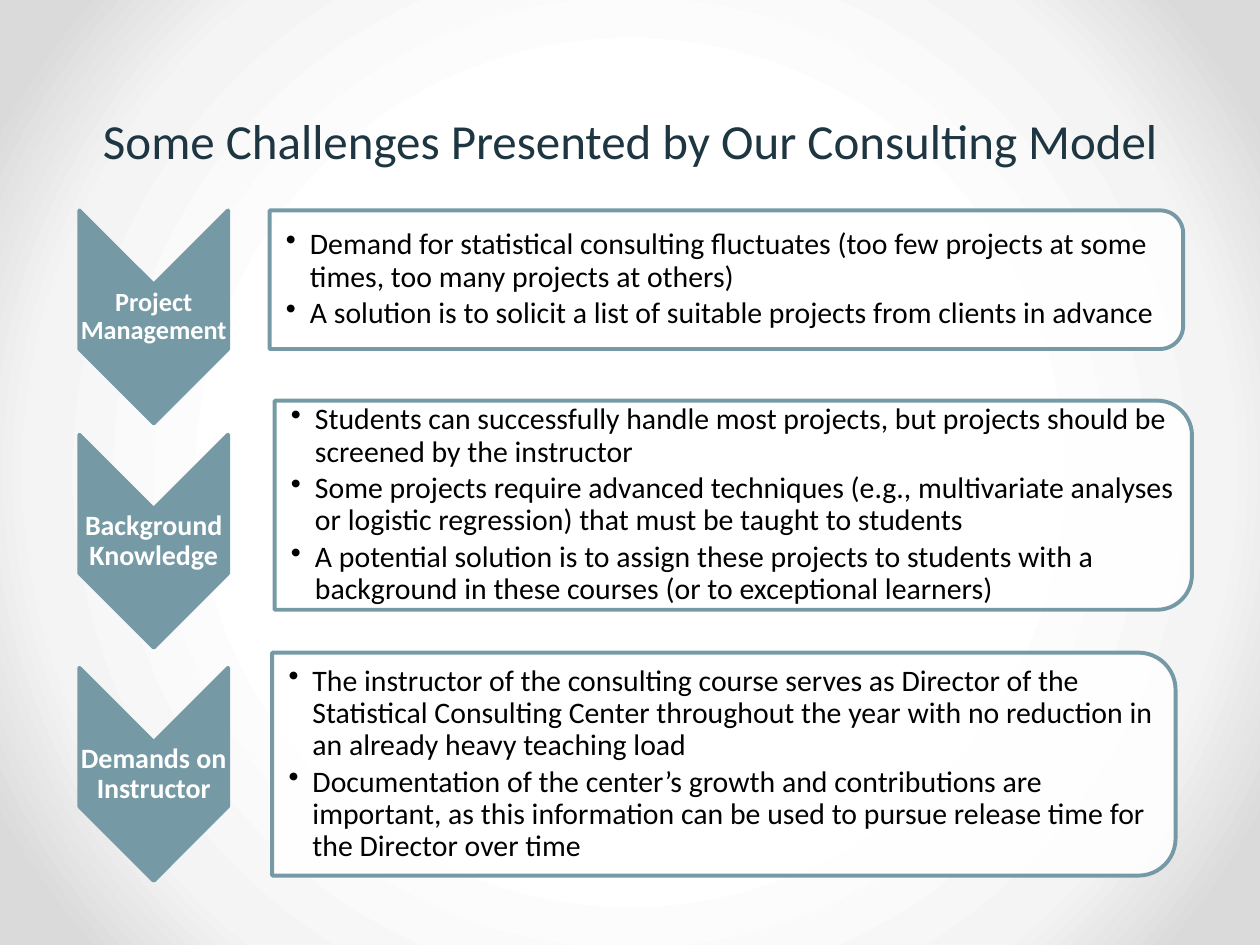
from lxml.etree import SubElement
from pptx import Presentation
from pptx.dml.color import RGBColor
from pptx.enum.shapes import MSO_SHAPE as Preset
from pptx.enum.text import MSO_ANCHOR as Anchor, PP_ALIGN as Align
from pptx.oxml.ns import qn
from pptx.util import Inches, Pt

FONT = "Calibri"
TEAL = RGBColor(0x75, 0x9A, 0xA5)
NAVY = RGBColor(0x1D, 0x36, 0x41)
WHITE = RGBColor(0xFF, 0xFF, 0xFF)
BLACK = RGBColor(0, 0, 0)
BACKGROUND_STOPS = [(50, "FFFFFF"), (76, "F4F4F4"), (92, "DADADA")]

CHEVRON_LEFT, CHEVRON_WIDTH, CHEVRON_HEIGHT = 0.63, 1.18, 1.69
LABEL_DROP, LABEL_HEIGHT = 0.59, 0.51

CHALLENGES = [
    {
        "label": "Project Management", "label_size": 15, "chevron_top": 1.67,
        "panel": (2.14, 1.67, 7.25, 1.1), "text_width": 7.2,
        "points": [
            "Demand for statistical consulting fluctuates (too few projects at some times, too many projects at others)",
            "A solution is to solicit a list of suitable projects from clients in advance",
        ],
    },
    {
        "label": "Background Knowledge", "label_size": 16, "chevron_top": 3.45,
        "panel": (2.18, 3.18, 7.28, 1.66), "text_width": 7.2,
        "points": [
            "Students can successfully handle most projects, but projects should be screened by the instructor",
            "Some projects require advanced techniques (e.g., multivariate analyses or logistic regression) that must be taught to students",
            "A potential solution is to assign these projects to students with a background in these courses (or to exceptional learners)",
        ],
    },
    {
        "label": "Demands on Instructor", "label_size": 16, "chevron_top": 5.3,
        "panel": (2.16, 5.18, 7.17, 1.77), "text_width": 7.09,
        "points": [
            "The instructor of the consulting course serves as Director of the Statistical Consulting Center throughout the year with no reduction in an already heavy teaching load",
            "Documentation of the center’s growth and contributions are important, as this information can be used to pursue release time for the Director over time",
        ],
    },
]


def set_background(page):
    page.background.fill.gradient()
    gradient = page.element.find(".//" + qn("a:gradFill"))
    for child in list(gradient):
        gradient.remove(child)
    stops = SubElement(gradient, qn("a:gsLst"))
    for position, color in BACKGROUND_STOPS:
        stop = SubElement(stops, qn("a:gs"), pos=str(position * 1000))
        SubElement(stop, qn("a:srgbClr"), val=color)
    circle = SubElement(gradient, qn("a:path"), path="circle")
    SubElement(circle, qn("a:fillToRect"), l="50000", t="50000", r="50000", b="50000")


def add_turned_shape(page, preset, left, top, width, height, fill):
    shape = page.shapes.add_shape(
        preset,
        Inches(left + (width - height) / 2), Inches(top + (height - width) / 2),
        Inches(height), Inches(width),
    )
    shape.rotation = 90
    shape.shadow.inherit = False
    shape.fill.solid()
    shape.fill.fore_color.rgb = fill
    shape.line.color.rgb = TEAL
    shape.line.width = Pt(2.25)
    return shape


def add_text(page, left, top, width, height, lines, size, color, bold=False):
    box = page.shapes.add_textbox(Inches(left), Inches(top), Inches(width), Inches(height))
    frame = box.text_frame
    frame.word_wrap = True
    frame.text = "\n".join(lines)
    for para in frame.paragraphs:
        para.font.name = FONT
        para.font.size = Pt(size)
        para.font.bold = bold
        para.font.color.rgb = color
    return frame


def center_in_box(frame, left_inset, space_after):
    frame.vertical_anchor = Anchor.MIDDLE
    frame.margin_left = Inches(left_inset)
    frame.margin_top = frame.margin_right = frame.margin_bottom = Inches(0.01)
    for para in frame.paragraphs:
        para.line_spacing = 0.9
        para.space_after = Pt(space_after)


def add_title(page, left, top, width, height):
    frame = add_text(page, left, top, width, height,
                     ["Some Challenges Presented by Our Consulting Model"], 28, NAVY)
    frame.paragraphs[0].alignment = Align.CENTER


def add_chevron(page, left, top, width, height, label, size):
    add_turned_shape(page, Preset.CHEVRON, left, top, width, height, TEAL)
    frame = add_text(page, left, top + LABEL_DROP, width, LABEL_HEIGHT,
                     [label], size, WHITE, bold=True)
    center_in_box(frame, 0.01, size * 0.35)
    frame.paragraphs[0].alignment = Align.CENTER


def add_panel(page, left, top, width, height, text_width, points):
    panel = add_turned_shape(page, Preset.ROUND_2_SAME_RECTANGLE,
                             left, top, width, height, WHITE)
    color = panel.element.spPr.find(qn("a:solidFill"))[0]
    SubElement(color, qn("a:alpha"), val="90000")
    frame = add_text(page, left, top, text_width, height, points, 17, BLACK)
    center_in_box(frame, 0.13, 2.55)
    for para in frame.paragraphs:
        properties = para._p.get_or_add_pPr()
        properties.set("marL", str(Inches(0.19)))
        properties.set("indent", str(Inches(-0.19)))
        bullet = properties.makeelement(qn("a:buChar"), {"char": "•"})
        properties.find(qn("a:defRPr")).addprevious(bullet)


def build_page(page):
    set_background(page)
    add_title(page, 0.5, 0.83, 9, 0.57)
    for challenge in CHALLENGES:
        add_chevron(page, CHEVRON_LEFT, challenge["chevron_top"], CHEVRON_WIDTH,
                    CHEVRON_HEIGHT, challenge["label"], challenge["label_size"])
        add_panel(page, *challenge["panel"], challenge["text_width"], challenge["points"])


def main():
    deck = Presentation()
    deck.slide_width, deck.slide_height = Inches(10), Inches(7.5)
    build_page(deck.slides.add_slide(deck.slide_layouts[6]))
    deck.save("out.pptx")


if __name__ == "__main__":
    main()
